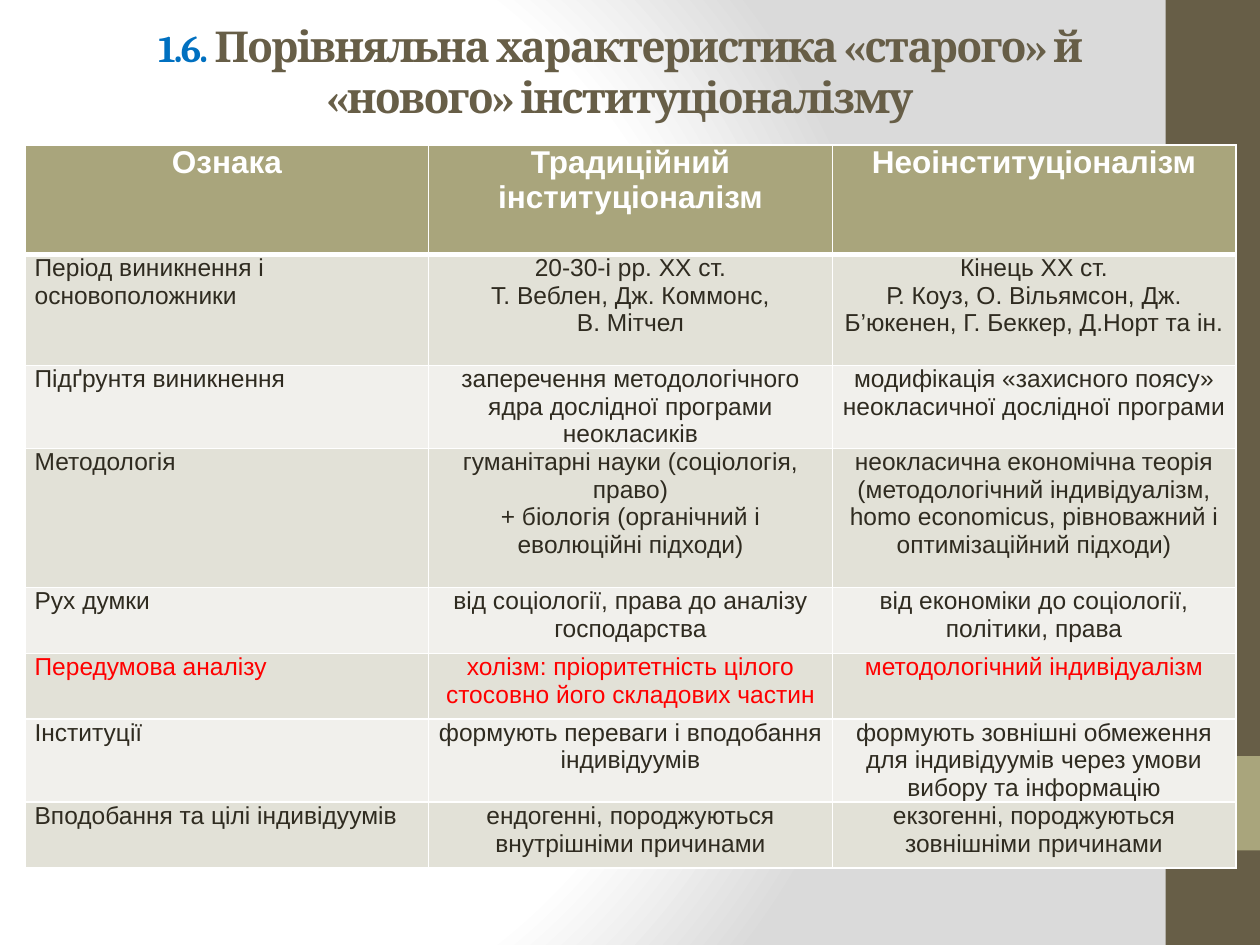
from pptx import Presentation
from pptx.dml.color import RGBColor
from pptx.enum.shapes import MSO_SHAPE
from pptx.enum.text import MSO_ANCHOR, MSO_AUTO_SIZE, PP_ALIGN
from pptx.oxml import parse_xml
from pptx.oxml.ns import nsdecls
from pptx.util import Pt

COLORS = {
    "white": "FFFFFF", "gray": "DADADA", "brown": "675E47", "olive": "A9A57C",
    "band_dark": "E2E1D7", "band_light": "F1F0EC",
    "text": "2F2B20", "red": "FF0000", "blue": "0070C0",
}

TITLE = [  # text, size, colour
    ("1.6. ", 21.6, "blue"),
    ("Порівняльна характеристика «старого» й «нового» інституціоналізму", 24.3, "brown"),
]
TITLE_BOX = (36.7, 9.4, 635, 62.6)

SIDE_BARS = [  # left, top, width, height, colour
    (666, 0, 54, 540, "brown"),
    (666, 432, 54, 54, "olive"),
]

ROWS = [  # height, cells
    (62.6, ["Ознака", "Традиційний інституціоналізм", "Неоінституціоналізм"]),
    (63.4, ["Період виникнення і основоположники",
            "20-30-і рр. ХХ ст.\nТ. Веблен, Дж. Коммонс,\nВ. Мітчел",
            "Кінець ХХ ст.\nР. Коуз, О. Вільямсон, Дж. Б’юкенен, Г. Беккер, Д.Норт та ін."]),
    (47.5, ["Підґрунтя виникнення",
            "заперечення методологічного ядра дослідної програми неокласиків",
            "модифікація «захисного поясу» неокласичної дослідної програми"]),
    (79.4, ["Методологія",
            "гуманітарні науки (соціологія, право)\n"
            "+ біологія (органічний і еволюційні підходи)",
            "неокласична економічна теорія (методологічний індивідуалізм, "
            "homo economicus, рівноважний і оптимізаційний підходи)"]),
    (37.6, ["Рух думки",
            "від соціології, права до аналізу господарства",
            "від економіки до соціології, політики, права"]),
    (37.6, ["Передумова аналізу",
            "холізм: пріоритетність цілого стосовно його складових частин",
            "методологічний індивідуалізм"]),
    (47.5, ["Інституції",
            "формують переваги і вподобання індивідуумів",
            "формують зовнішні обмеження для індивідуумів через умови вибору та інформацію"]),
    (37.6, ["Вподобання та цілі індивідуумів",
            "ендогенні, породжуються внутрішніми причинами",
            "екзогенні, породжуються зовнішніми причинами"]),
]
RED_ROW = 5
TABLE_LEFT, TABLE_TOP, COLUMN_WIDTH = 14.4, 82.9, 230.6
COLUMN_COUNT = len(ROWS[0][1])


def rgb(name):
    return RGBColor.from_string(COLORS[name])


def set_background(slide):
    """Circular gradient: white for three quarters, then fading to gray."""
    stops = "".join(
        f'<a:gs pos="{percent * 1000}"><a:srgbClr val="{COLORS[name]}"/></a:gs>'
        for percent, name in [(0, "white"), (75, "white"), (100, "gray")])
    slide.background.fill.solid()
    properties = slide.background.fill._xPr
    properties.replace(properties[0], parse_xml(
        f'<a:gradFill {nsdecls("a")} rotWithShape="1"><a:gsLst>{stops}</a:gsLst>'
        '<a:path path="circle"><a:fillToRect l="20000" t="50000" r="100000" b="50000"/>'
        '</a:path></a:gradFill>'))


def add_side_bars(slide):
    for *box, color in SIDE_BARS:
        bar = slide.shapes.add_shape(MSO_SHAPE.RECTANGLE, *map(Pt, box))
        bar.shadow.inherit = False
        bar.fill.solid()
        bar.fill.fore_color.rgb = rgb(color)
        bar.line.fill.background()


def fill_title(title):
    title.left, title.top, title.width, title.height = map(Pt, TITLE_BOX)
    frame = title.text_frame
    frame.auto_size = MSO_AUTO_SIZE.NONE
    frame.word_wrap = True
    frame.vertical_anchor = MSO_ANCHOR.MIDDLE
    paragraph = frame.paragraphs[0]
    paragraph.alignment = PP_ALIGN.CENTER
    for text, size, color in TITLE:
        run = paragraph.add_run()
        run.text = text
        run.font.name = "Cambria"
        run.font.size = Pt(size)
        run.font.bold = True
        run.font.color.rgb = rgb(color)
        run.font._element.set("spc", "-100")


def set_borders(cell, bottom_width):
    """White borders; call before the cell fill, which must follow them in the XML."""
    properties = cell._tc.get_or_add_tcPr()
    for side, width in [("L", 1), ("R", 1), ("T", 1), ("B", bottom_width)]:
        properties.append(parse_xml(
            f'<a:ln{side} {nsdecls("a")} w="{Pt(width)}"><a:solidFill>'
            f'<a:srgbClr val="{COLORS["white"]}"/></a:solidFill></a:ln{side}>'))


def fill_cell(cell, text, row, column):
    is_header = row == 0
    if is_header:
        fill, color = "olive", "white"
    else:
        fill = "band_dark" if row % 2 else "band_light"
        color = "red" if row == RED_ROW else "text"
    set_borders(cell, 3 if is_header else 1)
    cell.fill.solid()
    cell.fill.fore_color.rgb = rgb(fill)
    cell.margin_left = cell.margin_right = Pt(5.4)
    cell.margin_top = cell.margin_bottom = 0
    cell.text_frame.text = text
    for paragraph in cell.text_frame.paragraphs:
        centered = is_header or column > 0
        paragraph.alignment = PP_ALIGN.CENTER if centered else PP_ALIGN.LEFT
        for run in paragraph.runs:
            run.font.name = "Arial"
            run.font.size = Pt(18 if is_header else 14)
            run.font.bold = is_header
            run.font.color.rgb = rgb(color)


def add_comparison(slide):
    table = slide.shapes.add_table(
        len(ROWS), COLUMN_COUNT, Pt(TABLE_LEFT), Pt(TABLE_TOP),
        Pt(COLUMN_WIDTH * COLUMN_COUNT), Pt(sum(height for height, _ in ROWS))).table
    for table_column in table.columns:
        table_column.width = Pt(COLUMN_WIDTH)
    for row, (height, texts) in enumerate(ROWS):
        table.rows[row].height = Pt(height)
        for column, text in enumerate(texts):
            fill_cell(table.cell(row, column), text, row, column)


def main():
    prs = Presentation()
    prs.slide_width, prs.slide_height = Pt(720), Pt(540)
    slide = prs.slides.add_slide(prs.slide_layouts[5])
    set_background(slide)
    add_side_bars(slide)
    fill_title(slide.shapes.title)
    add_comparison(slide)
    prs.save("out.pptx")


if __name__ == "__main__":
    main()
